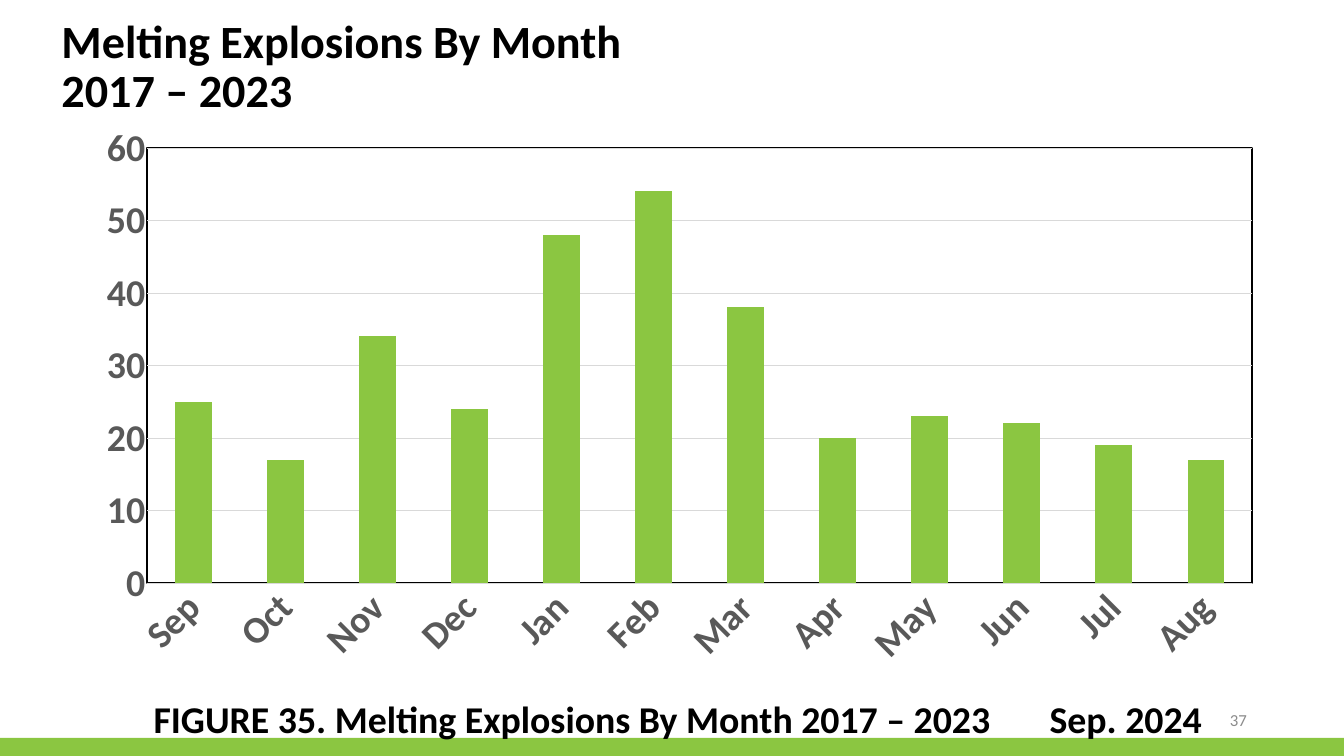
from lxml import etree
from pptx import Presentation
from pptx.chart.data import CategoryChartData
from pptx.dml.color import RGBColor
from pptx.enum.chart import XL_CHART_TYPE, XL_TICK_MARK
from pptx.enum.shapes import MSO_SHAPE
from pptx.enum.text import MSO_ANCHOR, PP_ALIGN
from pptx.oxml import parse_xml
from pptx.oxml.ns import nsdecls, qn
from pptx.util import Inches, Pt

COLUMNS = XL_CHART_TYPE.COLUMN_CLUSTERED
NO_TICK = XL_TICK_MARK.NONE
RECTANGLE = MSO_SHAPE.RECTANGLE
MIDDLE = MSO_ANCHOR.MIDDLE
RIGHT = PP_ALIGN.RIGHT

FONT = "Calibri"
COLORS = {"green": "8BC641", "black": "000000", "axis": "595959",
          "grid": "D9D9D9", "number": "8C8C8C"}


def style_font(font, size, color, bold=True):
    font.name = FONT
    font.size = Pt(size)
    font.bold = bold
    font.color.rgb = RGBColor.from_string(COLORS[color])


def add_text(left, top, width, height, lines, size, color, bold=True):
    box = slide.shapes.add_textbox(Inches(left), Inches(top), Inches(width), Inches(height))
    frame = box.text_frame
    frame.word_wrap = True
    frame.text = "\n".join(lines)
    for paragraph in frame.paragraphs:
        paragraph.line_spacing = 0.9
        for run in paragraph.runs:
            style_font(run.font, size, color, bold)
    return frame


prs = Presentation()
prs.slide_width, prs.slide_height = Inches(26.67), Inches(15)
slide = prs.slides.add_slide(prs.slide_layouts[6])

# Footer band and slide number
band = slide.shapes.add_shape(RECTANGLE, 0, Inches(14.64), Inches(26.67), Inches(0.36))
band.shadow.inherit = False
band.fill.solid()
band.fill.fore_color.rgb = RGBColor.from_string(COLORS["green"])
band.line.fill.background()

page_number = add_text(18.84, 13.9, 6, 0.8, ["37"], 24, "number", bold=False)
page_number.vertical_anchor = MIDDLE
page_number.paragraphs[0].alignment = RIGHT

# Title
add_text(1.12, 0.31, 11.91, 1.39, ["Melting Explosions By Month", "2017 – 2023"], 66, "black")

# Caption, with the date on a tab stop
caption = add_text(2.95, 13.85, 21.18, 2.11,
                   ["FIGURE 35. Melting Explosions By Month 2017 – 2023\tSep. 2024"], 54, "black")
caption_props = caption.paragraphs[0]._p.get_or_add_pPr()
tab_list = etree.SubElement(caption_props, qn("a:tabLst"))
etree.SubElement(tab_list, qn("a:tab"), pos=str(Inches(17.78)), algn="l")

# Explosions per month
explosions = {"Sep": 25, "Oct": 17, "Nov": 34, "Dec": 24, "Jan": 48, "Feb": 54,
              "Mar": 38, "Apr": 20, "May": 23, "Jun": 22, "Jul": 19, "Aug": 17}
chart_data = CategoryChartData()
chart_data.categories = list(explosions)
chart_data.add_series("Series 1", list(explosions.values()))
chart = slide.shapes.add_chart(COLUMNS, Inches(0.59), Inches(2.35), Inches(24.28),
                               Inches(11.71), chart_data).chart
chart.has_title = False
chart.has_legend = False
style_font(chart.font, 10, "black", bold=False)

bars = chart.plots[0]
bars.gap_width = 150
bars.overlap = -27
bars.vary_by_categories = False
bar_fill = bars.series[0].format.fill
bar_fill.solid()
bar_fill.fore_color.rgb = RGBColor.from_string(COLORS["green"])

# Axes
months, counts = chart.category_axis, chart.value_axis
for axis in (months, counts):
    axis.major_tick_mark = NO_TICK
    axis.minor_tick_mark = NO_TICK
    style_font(axis.tick_labels.font, 54, "axis")
counts.minimum_scale, counts.maximum_scale, counts.major_unit = 0, 60, 10
counts.format.line.fill.background()
counts.has_major_gridlines = True
for line in (months.format.line, counts.major_gridlines.format.line):
    line.color.rgb = RGBColor.from_string(COLORS["grid"])
    line.width = Pt(0.75)
months._element.find(qn("c:txPr")).find(qn("a:bodyPr")).set("rot", str(-45 * 60000))

# Plot area: fixed inner layout and black frame
plot_area = chart._chartSpace.chart.plotArea
for old_layout in plot_area.findall(qn("c:layout")):
    plot_area.remove(old_layout)
plot_area.insert(0, parse_xml(
    f'<c:layout {nsdecls("c")}><c:manualLayout><c:layoutTarget val="inner"/>'
    '<c:xMode val="edge"/><c:yMode val="edge"/><c:x val="0.096"/><c:y val="0.05"/>'
    '<c:w val="0.903"/><c:h val="0.737"/></c:manualLayout></c:layout>'))
plot_area.append(parse_xml(
    f'<c:spPr {nsdecls("c", "a")}><a:noFill/><a:ln w="{Pt(2)}"><a:solidFill>'
    f'<a:srgbClr val="{COLORS["black"]}"/></a:solidFill></a:ln></c:spPr>'))

prs.save("out.pptx")
